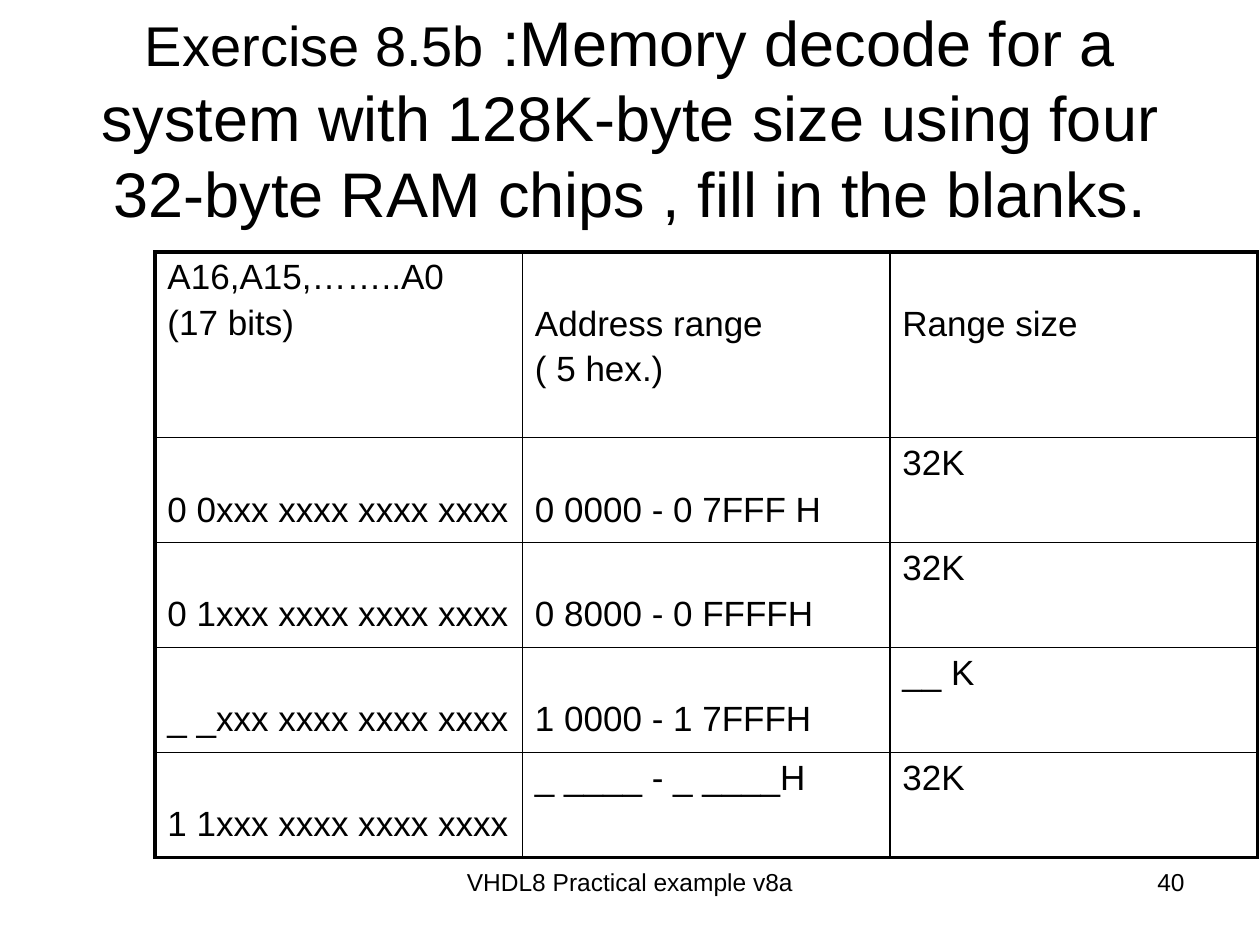
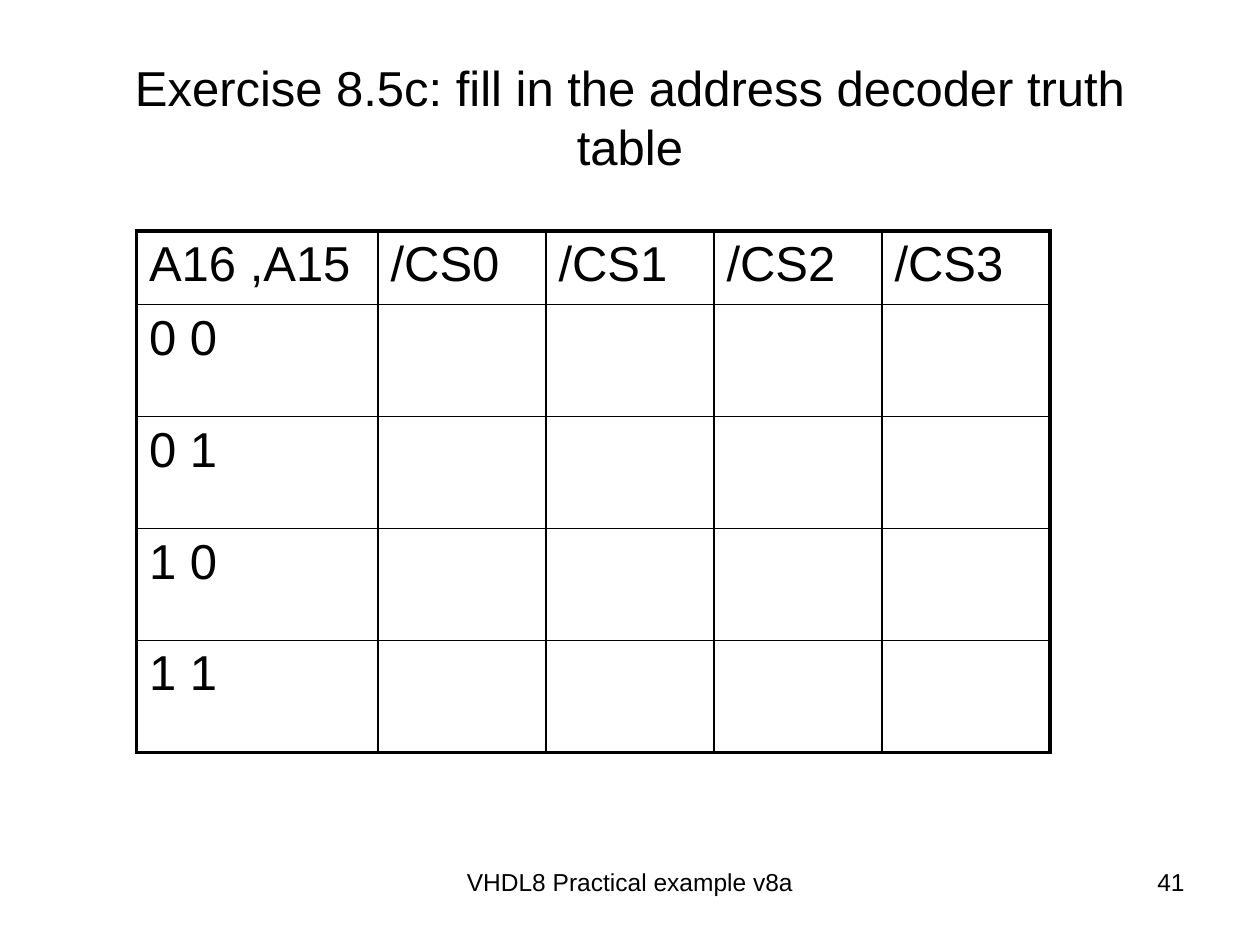
from lxml import etree
from pptx import Presentation
from pptx.dml.color import RGBColor
from pptx.enum import text
from pptx.oxml.ns import qn
from pptx.util import Pt

BLACK = RGBColor(0, 0, 0)
FONT = "Arial"
FOOTER = "VHDL8 Practical example v8a"
THICK, THIN = 2.25, 1
INSET_X, INSET_Y = 7.2, 3.6
PARA_GAP = 3.6
LINE_DROP = 26.6

RANGE_ROWS = [
    ["A16,A15,……..A0\n(17 bits)", "Address range\n( 5 hex.)", "Range size"],
    ["0 0xxx xxxx xxxx xxxx", "0 0000 - 0 7FFF H", "32K"],
    ["0 1xxx xxxx xxxx xxxx", "0 8000 - 0 FFFFH", "32K"],
    ["_ _xxx xxxx xxxx xxxx", "1 0000 - 1 7FFFH", "__ K"],
    ["1 1xxx xxxx xxxx xxxx", "_ ____ - _ ____H", "32K"],
]
LOWERED = {(0, 1), (0, 2), (1, 0), (1, 1), (2, 0), (2, 1), (3, 0), (3, 1), (4, 0)}
TRUTH_ROWS = [["A16 ,A15"] + [f"/CS{i}" for i in range(4)]] + [
    [f"{a16} {a15}"] + [""] * 4 for a16 in (0, 1) for a15 in (0, 1)
]


def style(font, size):
    """Apply the shared typeface and colour at the given size."""
    font.name, font.size, font.color.rgb = FONT, Pt(size), BLACK


def add_text(s, box, runs, align, anchor=text.MSO_ANCHOR.TOP):
    """Add a one-paragraph text box from (text, size) runs."""
    tf = s.shapes.add_textbox(*map(Pt, box)).text_frame
    tf.word_wrap = True
    tf.vertical_anchor = anchor
    p = tf.paragraphs[0]
    p.alignment = align
    style(p.font, runs[0][1])
    for content, size in runs:
        r = p.add_run()
        r.text = content
        style(r.font, size)


def add_slide(prs, title_runs, number):
    """Add a slide with its title, footer and number."""
    s = prs.slides.add_slide(prs.slide_layouts[6])
    add_text(s, (246, 492, 228, 37.5), [(FOOTER, 14)], text.PP_ALIGN.CENTER)
    add_text(s, (516, 492, 168, 37.5), [(str(number), 14)], text.PP_ALIGN.RIGHT)
    add_text(s, (36, 21.6, 648, 90), title_runs, text.PP_ALIGN.CENTER,
             text.MSO_ANCHOR.MIDDLE)
    return s


def set_borders(cell, widths):
    """Draw the left, right, top and bottom borders of a cell."""
    tc_pr = cell._tc.get_or_add_tcPr()
    for side, width in zip("LRTB", widths):
        ln = etree.SubElement(tc_pr, qn(f"a:ln{side}"), w=str(Pt(width)))
        fill = etree.SubElement(ln, qn("a:solidFill"))
        etree.SubElement(fill, qn("a:srgbClr"), val=str(BLACK))


def fill_cell(cell, content, size, drop):
    """Write a cell's lines, lowered from the top by drop points."""
    cell.margin_left = cell.margin_right = Pt(INSET_X)
    cell.margin_top, cell.margin_bottom = Pt(INSET_Y + drop), Pt(INSET_Y)
    tf = cell.text_frame
    tf.text = content
    for i, p in enumerate(tf.paragraphs):
        style(p.font, size)
        p.space_before = Pt(PARA_GAP if i else 0)


def add_grid(s, left, top, cols, heights, rows, size, lowered=()):
    """Add an unfilled table with a thick frame and thin inner lines."""
    n, m = len(heights), len(cols)
    table = s.shapes.add_table(n, m, Pt(left), Pt(top), Pt(sum(cols)),
                               Pt(sum(heights))).table
    table.first_row = table.horz_banding = False
    for col, width in zip(table.columns, cols):
        col.width = Pt(width)
    for i, row in enumerate(rows):
        table.rows[i].height = Pt(heights[i])
        for j, content in enumerate(row):
            cell = table.cell(i, j)
            edges = (j == 0, j == m - 1, i == 0, i == n - 1)
            set_borders(cell, [THICK if edge else THIN for edge in edges])
            cell.fill.background()
            fill_cell(cell, content, size, LINE_DROP if (i, j) in lowered else 0)


def main():
    """Build both exercise slides."""
    prs = Presentation()
    prs.slide_width, prs.slide_height = Pt(720), Pt(540)
    s = add_slide(prs, [
        ("Exercise 8.5b", 32),
        (" :Memory decode for a system with 128K-byte size using four "
         "32-byte RAM chips , fill in the blanks.", 36),
    ], 40)
    add_grid(s, 88.5, 144, [210] * 3, [106] + [60] * 4, RANGE_ROWS, 20, LOWERED)
    s = add_slide(prs, [
        ("Exercise 8.5c: fill in the address decoder truth table", 28),
    ], 41)
    add_grid(s, 78, 132, [138] + [96] * 4, [42] + [64] * 4, TRUTH_ROWS, 28)
    prs.save("out.pptx")


if __name__ == "__main__":
    main()
